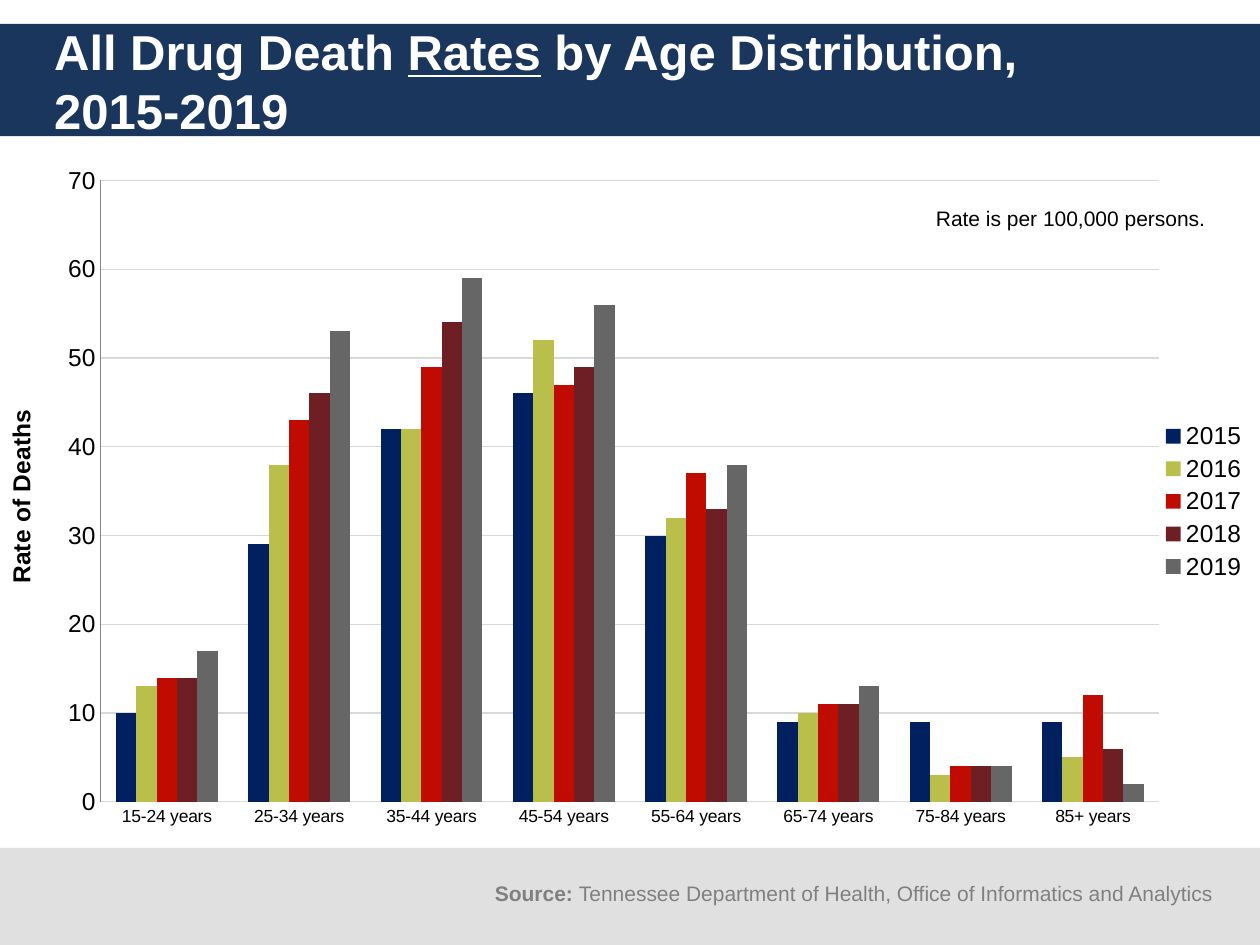
from lxml import etree
from pptx import Presentation, util as u
from pptx.chart.data import CategoryChartData
from pptx.dml.color import RGBColor
from pptx.enum import chart as ch, shapes, text

TITLE = [("All Drug Death ", False), ("Rates", True),
         (" by Age Distribution, ", False), ("2015-2019", False)]
RATE_NOTE = "Rate is per 100,000 persons."
SOURCE = [("Source: ", True),
          ("Tennessee Department of Health, Office of Informatics and Analytics", False)]
AGES = [f"{age}-{age + 9} years" for age in range(15, 85, 10)] + ["85+ years"]
RATES = {
    "2015": ("002060", [10, 29, 42, 46, 30, 9, 9, 9]),
    "2016": ("BABE4A", [13, 38, 42, 52, 32, 10, 3, 5]),
    "2017": ("BF0B00", [14, 43, 49, 47, 37, 11, 4, 12]),
    "2018": ("6D1F23", [14, 46, 54, 49, 33, 11, 4, 6]),
    "2019": ("666666", [17, 53, 59, 56, 38, 13, 4, 2]),
}
BANDS = [(0.19, 0.89, "1B365D"), (6.73, 0.77, "E0E0E0")]
PLOT = {"x": 0.08, "y": 0.03, "w": 0.84, "h": 0.91}


def inches(*lengths):
    return [u.Inches(length) for length in lengths]


def style(font, size, color="000000", bold=False):
    font.name = "Arial"
    font.size = u.Pt(size)
    font.bold = bold
    font.color.rgb = RGBColor.from_string(color)


def draw_line(line, color):
    line.color.rgb = RGBColor.from_string(color)
    line.width = u.Pt(0.75)


def add_band(slide, top, height, color):
    band = slide.shapes.add_shape(shapes.MSO_SHAPE.RECTANGLE, *inches(0, top, 10, height))
    band.shadow.inherit = False
    band.fill.solid()
    band.fill.fore_color.rgb = RGBColor.from_string(color)
    band.line.fill.background()


def add_note(slide, place, pieces, color):
    note = slide.shapes.add_textbox(*inches(*place)).text_frame
    note.word_wrap = True
    for words, bold in pieces:
        run = note.paragraphs[0].add_run()
        run.text = words
        style(run.font, 12, color, bold)


def set_plot_layout(chart):
    plot_area = chart._chartSpace.chart.plotArea
    ns = etree.QName(plot_area).namespace
    for old in plot_area.findall(f"{{{ns}}}layout"):
        plot_area.remove(old)
    layout = etree.Element(f"{{{ns}}}layout")
    manual = etree.SubElement(layout, f"{{{ns}}}manualLayout")
    settings = [("layoutTarget", "inner"), ("xMode", "edge"), ("yMode", "edge")]
    for tag, value in settings + list(PLOT.items()):
        etree.SubElement(manual, f"{{{ns}}}{tag}").set("val", str(value))
    plot_area.insert(0, layout)


def add_rates_chart(slide):
    rates = CategoryChartData()
    rates.categories = AGES
    for year, (_, values) in RATES.items():
        rates.add_series(year, values)
    chart = slide.shapes.add_chart(ch.XL_CHART_TYPE.COLUMN_CLUSTERED,
                                   *inches(0, 1.27, 10, 5.42), rates).chart
    style(chart.font, 10)
    chart.has_title = False
    chart.has_legend = True
    chart.legend.position = ch.XL_LEGEND_POSITION.RIGHT
    chart.legend.include_in_layout = False
    style(chart.legend.font, 14)

    columns = chart.plots[0]
    columns.gap_width = 150
    columns.overlap = 0
    columns.vary_by_categories = False
    for series, (color, _) in zip(columns.series, RATES.values()):
        series.format.fill.solid()
        series.format.fill.fore_color.rgb = RGBColor.from_string(color)

    ages, deaths = chart.category_axis, chart.value_axis
    for axis, size, color in [(ages, 10, "D9D9D9"), (deaths, 14, "868686")]:
        axis.major_tick_mark = axis.minor_tick_mark = ch.XL_TICK_MARK.NONE
        style(axis.tick_labels.font, size)
        draw_line(axis.format.line, color)
    deaths.minimum_scale, deaths.maximum_scale, deaths.major_unit = 0, 70, 10
    deaths.has_major_gridlines = True
    draw_line(deaths.major_gridlines.format.line, "D9D9D9")
    caption = deaths.axis_title.text_frame
    caption.text = "Rate of Deaths"
    style(caption.paragraphs[0].runs[0].font, 14, bold=True)
    set_plot_layout(chart)


def fill_title(slide):
    title = slide.shapes.title
    title.left, title.top, title.width, title.height = inches(0.33, 0.19, 9.67, 0.9)
    title.text_frame.vertical_anchor = text.MSO_ANCHOR.MIDDLE
    heading = title.text_frame.paragraphs[0]
    heading.alignment = text.PP_ALIGN.LEFT
    for words, underlined in TITLE:
        if words == TITLE[-1][0]:
            heading.add_line_break()
        run = heading.add_run()
        run.text = words
        style(run.font, 28, "FFFFFF", True)
        run.font.underline = underlined
    slide.shapes._spTree.append(title._element)


def main():
    deck = Presentation()
    deck.slide_width, deck.slide_height = inches(10, 7.5)
    slide = deck.slides.add_slide(deck.slide_layouts[5])
    for band in BANDS:
        add_band(slide, *band)
    add_rates_chart(slide)
    fill_title(slide)
    add_note(slide, (7.33, 1.58, 3, 0.3), [(RATE_NOTE, False)], "000000")
    add_note(slide, (3.83, 6.94, 6, 0.3), SOURCE, "808080")
    deck.save("out.pptx")


if __name__ == "__main__":
    main()
